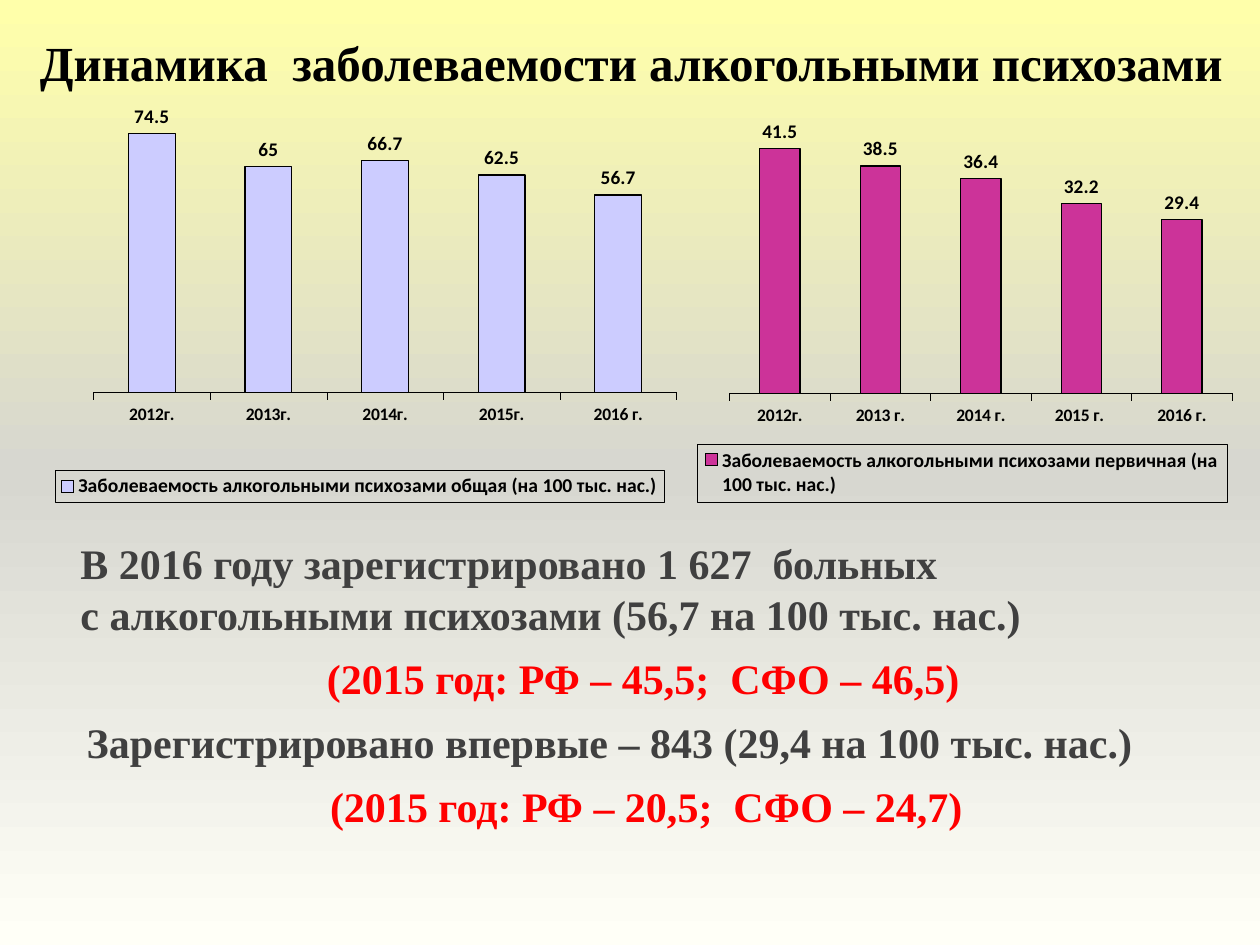
import copy

import pptx
import pptx.chart.data
import pptx.dml.color
import pptx.enum.chart
import pptx.enum.text
import pptx.oxml
import pptx.oxml.ns
import pptx.util

RGBColor = pptx.dml.color.RGBColor
Inches = pptx.util.Inches
Pt = pptx.util.Pt

BLACK = RGBColor(0x00, 0x00, 0x00)
GRAY = RGBColor(0x40, 0x40, 0x40)
RED = RGBColor(0xFF, 0x00, 0x00)
LAVENDER = RGBColor(0xCC, 0xCC, 0xFF)
MAGENTA = RGBColor(0xCC, 0x33, 0x99)
BACKGROUND_STOPS = [
    (0, RGBColor(0xFF, 0xFF, 0xAA)),
    (0.5, RGBColor(0xD7, 0xD7, 0xD0)),
    (1, RGBColor(0xFF, 0xFF, 0xF7)),
]
SERIF = "Times New Roman"
SANS = "Calibri"


def style_font(font, name, size, color):
    font.name = name
    font.size = Pt(size)
    font.bold = True
    font.color.rgb = color


def paint_background(slide):
    fill = slide.background.fill
    fill.gradient()
    fill.gradient_angle = 270
    stop_list = slide.element.xpath(".//a:gsLst")[0]
    stop_list.append(copy.deepcopy(stop_list[-1]))
    for stop, (position, color) in zip(fill.gradient_stops, BACKGROUND_STOPS):
        stop.position = position
        stop.color.rgb = color


def add_title(slide, text):
    title = slide.shapes.title
    title.left, title.top = Inches(0.12), Inches(0.21)
    title.width, title.height = Inches(9.88), Inches(0.57)
    frame = title.text_frame
    frame.word_wrap = True
    frame.auto_size = pptx.enum.text.MSO_AUTO_SIZE.NONE
    frame.vertical_anchor = pptx.enum.text.MSO_ANCHOR.TOP
    paragraph = frame.paragraphs[0]
    paragraph.alignment = pptx.enum.text.PP_ALIGN.LEFT
    run = paragraph.add_run()
    run.text = text
    style_font(run.font, SERIF, 28, BLACK)


def make_layout(box, inner=False):
    """Manual chart layout; box holds left, top, width, height as shares."""
    target = '<c:layoutTarget val="inner"/>' if inner else ""
    modes = "".join(f'<c:{axis}Mode val="edge"/>' for axis in "xy")
    values = "".join(f'<c:{key} val="{value}"/>' for key, value in zip("xywh", box))
    return pptx.oxml.parse_xml(
        f'<c:layout {pptx.oxml.ns.nsdecls("c")}><c:manualLayout>'
        f"{target}{modes}{values}</c:manualLayout></c:layout>")


def place_plot(chart, box):
    plot_area = chart._chartSpace.xpath("c:chart/c:plotArea")[0]
    for old_layout in plot_area.xpath("c:layout"):
        plot_area.remove(old_layout)
    plot_area.insert(0, make_layout(box, inner=True))


def add_legend(chart, box):
    chart.has_legend = True
    chart.legend.position = pptx.enum.chart.XL_LEGEND_POSITION.BOTTOM
    chart.legend.include_in_layout = False
    style_font(chart.legend.font, SANS, 11.2, BLACK)
    legend = chart._chartSpace.xpath("c:chart/c:legend")[0]
    for old_layout in legend.xpath("c:layout"):
        legend.remove(old_layout)
    overlay = legend.xpath("c:overlay")[0]
    overlay.addprevious(make_layout(box))
    overlay.addnext(pptx.oxml.parse_xml(
        f'<c:spPr {pptx.oxml.ns.nsdecls("c", "a")}><a:noFill/><a:ln w="2286">'
        f'<a:solidFill><a:srgbClr val="{BLACK}"/></a:solidFill></a:ln></c:spPr>'))


def add_column_chart(slide, box, categories, name, values, color, maximum,
                     plot_box, legend_box):
    data = pptx.chart.data.CategoryChartData()
    data.categories = categories
    data.add_series(name, values)
    chart = slide.shapes.add_chart(
        pptx.enum.chart.XL_CHART_TYPE.COLUMN_CLUSTERED,
        *(Inches(length) for length in box), data).chart
    chart.has_title = False
    style_font(chart.font, SANS, 11.8, BLACK)

    axis = chart.category_axis
    axis.tick_label_position = pptx.enum.chart.XL_TICK_LABEL_POSITION.LOW
    axis.major_tick_mark = pptx.enum.chart.XL_TICK_MARK.OUTSIDE
    axis.format.line.color.rgb = BLACK
    axis.format.line.width = Pt(0.18)
    style_font(axis.tick_labels.font, SANS, 10, BLACK)
    chart.value_axis.visible = False
    chart.value_axis.has_major_gridlines = False
    chart.value_axis.minimum_scale = 0
    chart.value_axis.maximum_scale = maximum

    plot = chart.plots[0]
    plot.gap_width = 150
    plot.vary_by_categories = False
    plot.has_data_labels = True
    plot.data_labels.show_value = True
    plot.data_labels.position = pptx.enum.chart.XL_LABEL_POSITION.OUTSIDE_END
    style_font(plot.data_labels.font, SANS, 11, BLACK)
    columns = plot.series[0].format
    columns.fill.solid()
    columns.fill.fore_color.rgb = color
    columns.line.color.rgb = BLACK
    columns.line.width = Pt(0.71)

    place_plot(chart, plot_box)
    add_legend(chart, legend_box)


def add_summary(slide, entries):
    """Each entry: lines, colour, whether centred, left margin in inches."""
    box = slide.shapes.add_textbox(
        Inches(0.54), Inches(4.22), Inches(9.13), Inches(2.76))
    frame = box.text_frame
    frame.word_wrap = True
    for index, (lines, color, centred, margin) in enumerate(entries):
        paragraph = frame.add_paragraph() if index else frame.paragraphs[0]
        paragraph.space_before = Pt(4.8)
        paragraph.space_after = Pt(3)
        if centred:
            paragraph.alignment = pptx.enum.text.PP_ALIGN.CENTER
        paragraph._p.get_or_add_pPr().set("marL", str(Inches(margin)))
        for number, line in enumerate(lines):
            if number:
                paragraph.add_line_break()
            run = paragraph.add_run()
            run.text = line
            style_font(run.font, SERIF, 24, color)


def main():
    presentation = pptx.Presentation()
    presentation.slide_width = Inches(10)
    presentation.slide_height = Inches(7.5)
    slide = presentation.slides.add_slide(presentation.slide_layouts[5])
    paint_background(slide)
    add_column_chart(
        slide, (0.34, 0.81, 5.03, 3.2),
        ["2012г.", "2013г.", "2014г.", "2015г.", "2016 г."],
        "Заболеваемость алкогольными психозами общая (на 100 тыс. нас.)",
        [74.5, 65, 66.7, 62.5, 56.7], LAVENDER, 80,
        plot_box=(0.08, 0.03, 0.92, 0.69), legend_box=(0.02, 0.92, 0.96, 0.08))
    add_column_chart(
        slide, (5.49, 0.89, 4.29, 3.1),
        ["2012г.", "2013 г.", "2014 г.", "2015 г. ", "2016 г."],
        "Заболеваемость алкогольными психозами первичная (на 100 тыс. нас.)",
        [41.5, 38.5, 36.4, 32.2, 29.4], MAGENTA, 45,
        plot_box=(0.07, 0.04, 0.93, 0.68), legend_box=(0.01, 0.85, 0.98, 0.15))
    add_summary(slide, [
        (["В 2016 году зарегистрировано 1 627  больных ",
          "с алкогольными психозами (56,7 на 100 тыс. нас.)"], GRAY, False, 0),
        (["(2015 год: РФ – 45,5;  СФО – 46,5)"], RED, True, 0),
        (["Зарегистрировано впервые – 843 (29,4 на 100 тыс. нас.)"], GRAY, False, 0.05),
        (["(2015 год: РФ – 20,5;  СФО – 24,7)"], RED, True, 0.05),
    ])
    add_title(slide, " Динамика  заболеваемости алкогольными психозами")
    presentation.save("out.pptx")


if __name__ == "__main__":
    main()
